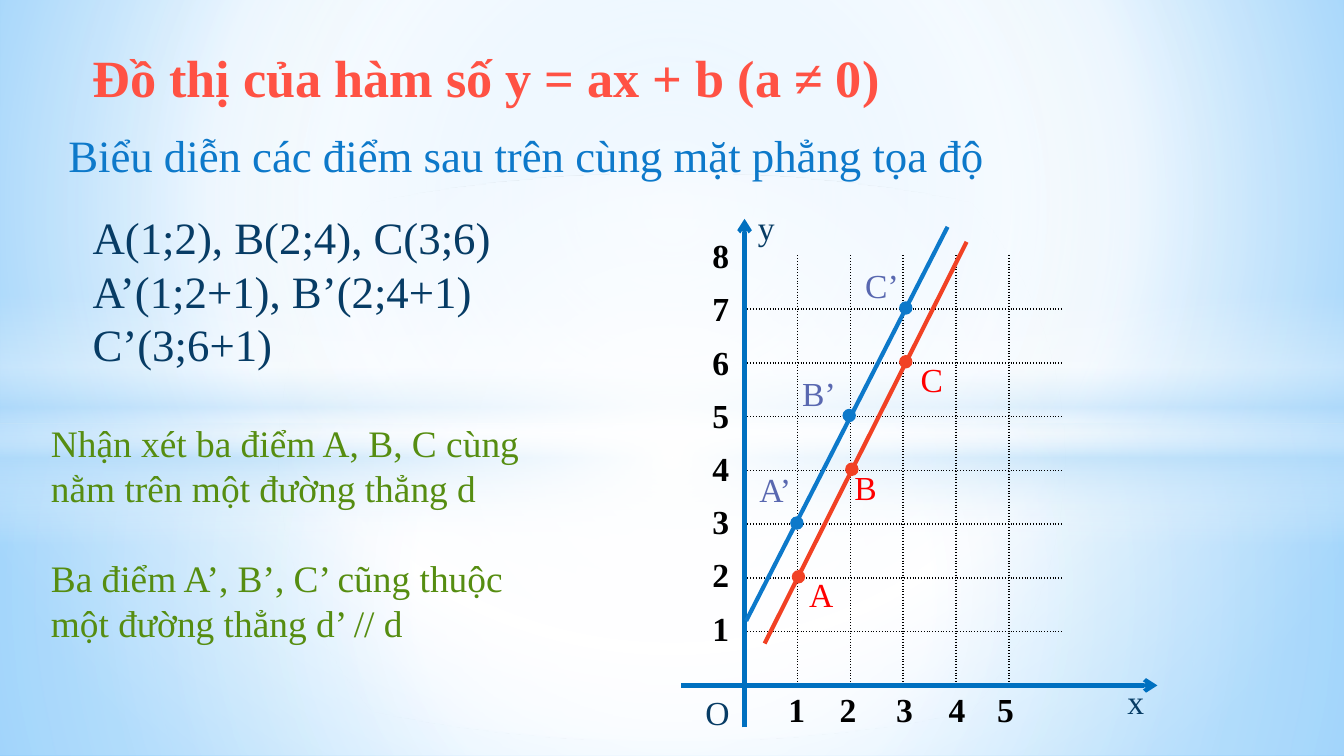
from dataclasses import dataclass

from lxml import etree
from pptx import Presentation
from pptx.dml.color import RGBColor
from pptx.enum.shapes import MSO_CONNECTOR, MSO_SHAPE
from pptx.enum.text import MSO_AUTO_SIZE
from pptx.oxml import parse_xml
from pptx.oxml.ns import nsdecls, qn
from pptx.util import Inches, Pt

RECTANGLE, ELLIPSE = MSO_SHAPE.RECTANGLE, MSO_SHAPE.OVAL
DOT = MSO_SHAPE.FLOWCHART_CONNECTOR
STRAIGHT = MSO_CONNECTOR.STRAIGHT
FIT_SHAPE = MSO_AUTO_SIZE.SHAPE_TO_FIT_TEXT


@dataclass(frozen=True)
class Theme:
    font: str = "Times New Roman"
    title: str = "FF5244"
    task: str = "0D79CA"
    ink: str = "073C65"
    remark: str = "568D11"
    axis: str = "0070C0"
    number: str = "000000"
    line_d: str = "F14124"
    label_d: str = "FF0000"
    line_d2: str = "0D79CA"
    label_d2: str = "5968B0"
    title_size: int = 28
    task_size: int = 24
    remark_size: int = 20
    label_size: int = 18
    stroke: float = 2.25


@dataclass(frozen=True)
class Gradient:
    stops: tuple  # (position %, colour, opacity %)
    focus: tuple | None = (50, 50, 50, 50)  # None makes it run downwards


@dataclass(frozen=True)
class Panel:
    kind: int
    top: float  # share of the slide height
    height: float
    gradient: Gradient


@dataclass(frozen=True)
class Note:
    lines: tuple
    box: tuple  # left, top, width, height in slide grid cells
    size: int
    color: str
    bold: bool = False
    wrap: bool = False
    gap: int = 0  # points between paragraphs


@dataclass(frozen=True)
class Mark:
    name: str
    at: tuple  # graph coordinates of the dot
    label_at: tuple  # graph coordinates of the label's top left
    width: float


@dataclass(frozen=True)
class Segment:
    start: tuple
    end: tuple
    color: str
    arrow: bool = False


THEME = Theme()
CELL = Inches(0.1)  # slide grid: 100 columns
WIDTH = 100 * CELL
HEIGHT = WIDTH * 9 // 16
COLUMNS, ROWS = 6, 8
UNIT_X, UNIT_Y = Inches(2.36) // COLUMNS, Inches(0.4)
ORIGIN_X, ORIGIN_Y = 55.4 * CELL, 51 * CELL
DOT_SIZE = CELL
LABEL_WIDTH, LABEL_HEIGHT = 3.3, 4

BACKDROP = Gradient(((0, "9ED5FF", 100), (60, "FFFFFF", 100), (100, "5BB9FF", 100)),
                    (20, 10, 20, 60))
PANELS = (
    Panel(RECTANGLE, 0.56, 0.44, Gradient(
        ((0, "FFFFFF", 91), (37, "FFFFFF", 76), (100, "B4DCFA", 79)))),
    Panel(RECTANGLE, 0, 0.56, Gradient(
        ((0, "FFFFFF", 89), (48, "FFFFFF", 62), (100, "B4DCFA", 79)))),
    Panel(RECTANGLE, 0.39, 0.33, Gradient(
        ((0, "FFFFFF", 0), (29, "FFFFFF", 30), (45, "B4DCFA", 40),
         (55, "FFFFFF", 26), (65, "B4DCFA", 60), (100, "FFFFFF", 0)), None)),
    Panel(ELLIPSE, 0.23, 0.75, Gradient(((0, "FFFFFF", 100), (54, "FFFFFF", 0)))),
)
NOTES = (
    Note(("Đồ thị của hàm số y = ax + b (a ≠ 0)",), (5.9, 2.9, 61.3, 5.7),
         THEME.title_size, THEME.title, bold=True),
    Note(("Biểu diễn các điểm sau trên cùng mặt phẳng tọa độ",), (4.1, 9, 70.7, 5),
         THEME.task_size, THEME.task),
    Note(("A(1;2), B(2;4), C(3;6)", "A’(1;2+1), B’(2;4+1)", "C’(3;6+1)"),
         (5.9, 15.1, 31.9, 13.1), THEME.task_size, THEME.ink),
    Note(("Nhận xét ba điểm A, B, C cùng nằm trên một đường thẳng d",
          "Ba điểm A’, B’, C’ cũng thuộc một đường thẳng d’ // d"),
         (2.8, 30.8, 36.9, 17.8), THEME.remark_size, THEME.remark, wrap=True, gap=24),
)
AXES = (Segment((-1.2, 0), (7.81, 0), THEME.axis, True),
        Segment((0, -0.78), (0, 8.68), THEME.axis, True))
LINES = (Segment((0.38, 0.78), (4.2, 8.25), THEME.line_d),
         Segment((0.03, 1.2), (3.84, 8.53), THEME.line_d2))
AXIS_NAMES = (("x", (6.99, 0.2), 3.3), ("y", (0, 9.02), 3.3), ("O", (-0.99, 0), 3.8))
X_NUMBERS = (0.58, 1.55, 2.62, 3.61, 4.53)  # label lefts in graph columns
MARKS_D = (Mark("A", (1.02, 2.02), (0.97, 2.2), 3.8),
           Mark("B", (2.03, 4.02), (1.83, 4.18), 3.7),
           Mark("C", (3.05, 6.02), (3.08, 6.2), 3.7))
MARKS_D2 = (Mark("A’", (0.99, 3.02), (0.03, 4.15), 4.4),
            Mark("B’", (1.98, 5.02), (0.84, 5.93), 4.5),
            Mark("C’", (3.05, 7.02), (2.03, 7.95), 4.5))


def graph(point: tuple) -> tuple:
    return int(ORIGIN_X + point[0] * UNIT_X), int(ORIGIN_Y - point[1] * UNIT_Y)


def fill_gradient(element, fill, gradient: Gradient) -> None:
    stops = "".join(
        f'<a:gs pos="{pos * 1000}"><a:srgbClr val="{color}">'
        f'<a:alpha val="{opacity * 1000}"/></a:srgbClr></a:gs>'
        for pos, color, opacity in gradient.stops)
    if gradient.focus:
        sides = " ".join(f'{side}="{share * 1000}"' for side, share in zip("ltrb", gradient.focus))
        course = f'<a:path path="circle"><a:fillToRect {sides}/></a:path>'
    else:
        course = '<a:lin ang="5400000" scaled="0"/>'
    fill.background()
    empty = element.find(".//" + qn("a:noFill"))
    empty.getparent().replace(empty, parse_xml(
        f'<a:gradFill rotWithShape="1" {nsdecls("a")}><a:gsLst>{stops}</a:gsLst>{course}</a:gradFill>'))


def draw_panel(slide, panel: Panel) -> None:
    shape = slide.shapes.add_shape(panel.kind, 0, int(panel.top * HEIGHT),
                                   WIDTH, int(panel.height * HEIGHT))
    shape.shadow.inherit = False
    fill_gradient(shape.element, shape.fill, panel.gradient)
    shape.line.fill.background()


def draw_note(slide, note: Note) -> None:
    frame = slide.shapes.add_textbox(*(int(side * CELL) for side in note.box)).text_frame
    for key, value in {"word_wrap": note.wrap, "auto_size": FIT_SHAPE}.items():
        setattr(frame, key, value)
    for index, line in enumerate(note.lines):
        paragraph = frame.add_paragraph() if index else frame.paragraphs[0]
        paragraph.space_before = Pt(note.gap if index else 0)
        run = paragraph.add_run()
        run.text = line
        style = {"name": THEME.font, "size": Pt(note.size), "bold": note.bold}
        for key, value in style.items():
            setattr(run.font, key, value)
        run.font.color.rgb = RGBColor.from_string(note.color)


def draw_label(slide, text: str, at: tuple, color: str,
               width: float = LABEL_WIDTH, bold: bool = False) -> None:
    left, top = graph(at)
    draw_note(slide, Note((text,), (left / CELL, top / CELL, width, LABEL_HEIGHT),
                          THEME.label_size, color, bold))


def draw_segment(slide, segment: Segment) -> None:
    connector = slide.shapes.add_connector(STRAIGHT, *graph(segment.start), *graph(segment.end))
    connector.line.color.rgb = RGBColor.from_string(segment.color)
    connector.line.width = Pt(THEME.stroke)
    if segment.arrow:
        etree.SubElement(connector.line._get_or_add_ln(), qn("a:tailEnd"), type="arrow")
    etree.SubElement(connector.element.spPr, qn("a:effectLst"))


def draw_mark(slide, mark: Mark, dot_color: str, label_color: str) -> None:
    x, y = graph(mark.at)
    dot = slide.shapes.add_shape(DOT, x - DOT_SIZE // 2, y - DOT_SIZE // 2, DOT_SIZE, DOT_SIZE)
    dot.shadow.inherit = False
    dot.fill.solid()
    dot.fill.fore_color.rgb = RGBColor.from_string(dot_color)
    dot.line.fill.background()
    draw_label(slide, mark.name, mark.label_at, label_color, mark.width)


def draw_grid(slide) -> None:
    """Dotted lines between cells, none on the outer edge."""
    frame = slide.shapes.add_table(ROWS, COLUMNS, *graph((0, ROWS)),
                                   COLUMNS * UNIT_X, ROWS * UNIT_Y)
    table = frame.table
    for flag in ("first_row", "horz_banding"):
        setattr(table, flag, False)
    dotted = (f'<a:solidFill><a:srgbClr val="{THEME.number}"/></a:solidFill>'
              '<a:prstDash val="sysDot"/>')
    for row in range(ROWS):
        for column in range(COLUMNS):
            cell = table.cell(row, column)
            for margin in ("margin_top", "margin_bottom"):
                setattr(cell, margin, 0)
            inner = {"L": column > 0, "R": column < COLUMNS - 1,
                     "T": row > 0, "B": row < ROWS - 1}
            properties = cell._tc.get_or_add_tcPr()
            for side, shown in inner.items():
                properties.append(parse_xml(
                    f'<a:ln{side} w="12700" {nsdecls("a")}>'
                    f'{dotted if shown else "<a:noFill/>"}</a:ln{side}>'))
            cell.fill.background()


def main() -> None:
    deck = Presentation()
    deck.slide_width, deck.slide_height = WIDTH, HEIGHT
    slide = deck.slides.add_slide(deck.slide_layouts[6])

    # Backdrop
    fill_gradient(slide.element, slide.background.fill, BACKDROP)
    for panel in PANELS:
        draw_panel(slide, panel)

    # Text on the left
    for note in NOTES:
        draw_note(slide, note)

    # Coordinate plane
    draw_grid(slide)
    for axis in AXES:
        draw_segment(slide, axis)
    for number, left in enumerate(X_NUMBERS, 1):
        draw_label(slide, str(number), (left, 0.05), THEME.number, bold=True)
    for number in range(1, ROWS + 1):
        draw_label(slide, str(number), (-0.86, 0.58 + 0.99 * number), THEME.number, bold=True)
    for name, at, width in AXIS_NAMES:
        draw_label(slide, name, at, THEME.ink, width)

    # Points and the two parallel lines
    for marks, dot_color, label_color in ((MARKS_D, THEME.line_d, THEME.label_d),
                                          (MARKS_D2, THEME.line_d2, THEME.label_d2)):
        for mark in marks:
            draw_mark(slide, mark, dot_color, label_color)
    for line in LINES:
        draw_segment(slide, line)

    deck.save("out.pptx")


if __name__ == "__main__":
    main()
